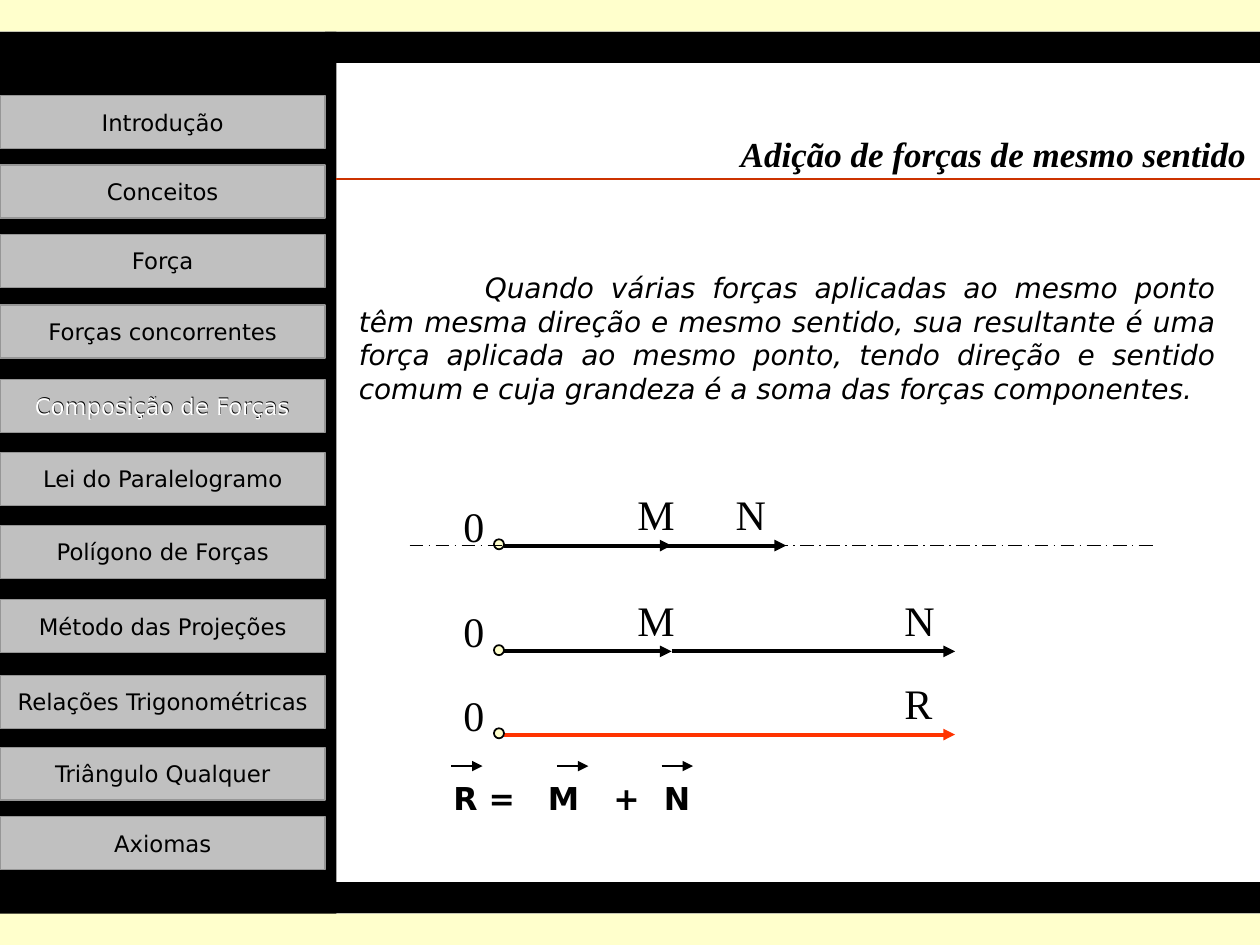
from lxml import etree
from pptx import Presentation
from pptx.dml.color import RGBColor
from pptx.enum.dml import MSO_LINE
from pptx.enum.shapes import MSO_CONNECTOR, MSO_SHAPE
from pptx.enum.text import MSO_ANCHOR, PP_ALIGN
from pptx.oxml.ns import qn
from pptx.util import Inches, Pt

RECT, OVAL = MSO_SHAPE.RECTANGLE, MSO_SHAPE.OVAL
BUTTON = MSO_SHAPE.ACTION_BUTTON_CUSTOM
STRAIGHT = MSO_CONNECTOR.STRAIGHT
DASH = MSO_LINE.LONG_DASH_DOT
TOP, MIDDLE = MSO_ANCHOR.TOP, MSO_ANCHOR.MIDDLE
LEFT, CENTER = PP_ALIGN.LEFT, PP_ALIGN.CENTER
RIGHT, JUSTIFY = PP_ALIGN.RIGHT, PP_ALIGN.JUSTIFY
SANS, SERIF = "DejaVu Sans", "Times New Roman"
COLORS = {"black": "000000", "white": "FFFFFF", "cream": "FFFFCC",
          "gray": "C0C0C0", "edge": "969696", "rule": "CC3300",
          "red": "FF3300"}

MENU = [("Introdução", 0.76), ("Conceitos", 1.31), ("Força", 1.86),
        ("Forças concorrentes", 2.42), ("Composição de Forças", 3.01),
        ("Lei do Paralelogramo", 3.59), ("Polígono de Forças", 4.17),
        ("Método das Projeções", 4.76), ("Relações Trigonométricas", 5.36),
        ("Triângulo Qualquer", 5.93), ("Axiomas", 6.48)]
ACTIVE = "Composição de Forças"
BODY = ("Quando várias forças aplicadas ao mesmo ponto têm mesma direção e "
        "mesmo sentido, sua resultante é uma força aplicada ao mesmo ponto, "
        "tendo direção e sentido comum e cuja grandeza é a soma das forças "
        "componentes.")


def color(name):
    return RGBColor.from_string(COLORS[name])


def write(shape, text, size=13, font=SANS, hue="black", bold=False,
          italic=False, align=LEFT, anchor=TOP, wrap=True, space=None,
          indent=None, tab=None):
    frame = shape.text_frame
    frame.word_wrap = wrap
    frame.vertical_anchor = anchor
    par = frame.paragraphs[0]
    par.text = text
    par.alignment = align
    if space:
        par.line_spacing = space
    props = par._p.get_or_add_pPr()
    if indent:
        props.set("indent", str(Inches(indent)))
    if tab:
        stops = etree.SubElement(props, qn("a:tabLst"))
        etree.SubElement(stops, qn("a:tab"), pos=str(Inches(tab)), algn="l")
    style = par.runs[0].font if not tab else par.font
    targets = [run.font for run in par.runs] if tab else [style]
    for style in targets:
        style.size, style.name = Pt(size), font
        style.bold, style.italic = bold, italic
        style.color.rgb = color(hue)


def label(slide, text, x, y, w, h, **form):
    box = slide.shapes.add_textbox(Inches(x), Inches(y), Inches(w), Inches(h))
    write(box, text, **form)


def block(slide, kind, x, y, w, h, fill, edge=None, width=0):
    shape = slide.shapes.add_shape(
        kind, Inches(x), Inches(y), Inches(w), Inches(h))
    shape.shadow.inherit = False
    shape.fill.solid()
    shape.fill.fore_color.rgb = color(fill)
    if edge:
        shape.line.color.rgb = color(edge)
        shape.line.width = Pt(width)
    else:
        shape.line.fill.background()
    return shape


def line(slide, x, y, end, hue="black", width=1, arrow=False, dash=None):
    link = slide.shapes.add_connector(
        STRAIGHT, Inches(x), Inches(y), Inches(end), Inches(y))
    link.line.color.rgb = color(hue)
    link.line.width = Pt(width)
    if dash:
        link.line.dash_style = dash
    if arrow:
        etree.SubElement(link.line._get_or_add_ln(), qn("a:tailEnd"),
                         type="triangle")
    etree.SubElement(link._element.spPr, qn("a:effectLst"))


def frame(slide, x, y, w, h):
    """Black side bar and bands between two cream edges."""
    edge, side = 0.25, 2.67
    block(slide, RECT, x, y + edge, side, h - edge, "black")
    for top, hue, left in [(edge, "black", 2.58), (h - 2 * edge, "black", 2.58),
                           (0, "cream", 0), (h - edge, "cream", 0)]:
        block(slide, RECT, x + left, y + top, w - left, edge, hue)


def menu(slide, x, y, w):
    """Column of buttons; the active one has a white label on top."""
    high = 0.42
    for name, top in MENU:
        key = block(slide, BUTTON, x, y + top, w, high, "gray", "edge")
        write(key, name, align=CENTER, anchor=MIDDLE, wrap=False)
        if name == ACTIVE:
            label(slide, name, x + 0.09, y + top + 0.09, w - 0.19, 0.25,
                  hue="white", align=CENTER, anchor=MIDDLE, wrap=False)


def head(slide, x, y, w):
    """Title above a thin rule."""
    line(slide, x, y + 0.42, x + w, "rule")
    bar = block(slide, RECT, x + 0.99, y, w - 1, 0.34, "white")
    write(bar, "Adição de forças de mesmo sentido", size=20, font=SERIF,
          bold=True, italic=True, align=RIGHT)


def force(slide, x, y, arrows, hue="black"):
    """Arrows from point 0; each is (start, end, name, name offset)."""
    form = {"size": 24, "font": SERIF}
    for start, end, name, left in arrows:
        line(slide, x + start, y, x + end, hue, 2.25, arrow=True)
        label(slide, name, x + left, y - 0.5, 0.5, 0.5, **form)
    label(slide, "0", x - 0.42, y - 0.41, 0.5, 0.5, **form)
    block(slide, OVAL, x - 0.08, y - 0.05, 0.08, 0.08, "cream", "black", 1)


def formula(slide, x, y):
    """Vector sum with a small arrow over each letter."""
    for text, left, wide, mark in [("R =", 0, 1.1, 0.08),
                                   ("M\t+", 0.75, 1.08, 0.92),
                                   ("N", 1.67, 0.6, 1.75)]:
        label(slide, text, x + left, y + 0.02, wide, 0.43, size=18, bold=True,
              space=1.1, tab=0.52 if "\t" in text else None)
        line(slide, x + mark, y, x + mark + 0.25, arrow=True)


def diagram(slide, x, y):
    """Both forces on one line, then end to end, then the resultant."""
    first = (0, 1.33, "M", 0.96)
    force(slide, x, y, [first, (0, 2.24, "N", 1.74)])
    line(slide, x - 0.75, y, x + 5.17, dash=DASH)
    force(slide, x, y + 0.84, [first, (1.33, 3.58, "N", 3.08)])
    force(slide, x, y + 1.5, [(0, 3.58, "R", 3.08)], "red")
    formula(slide, x - 0.5, y + 1.75)


def main():
    deck = Presentation()
    deck.slide_width, deck.slide_height = Inches(10), Inches(7.5)
    slide = deck.slides.add_slide(deck.slide_layouts[6])
    frame(slide, 0, 0, 10, 7.5)
    menu(slide, 0, 0, 2.58)
    head(slide, 2.67, 1, 7.33)
    label(slide, BODY, 2.75, 2.1, 7, 1.17, size=16, italic=True,
          align=JUSTIFY, indent=1)
    diagram(slide, 4, 4.33)
    deck.save("out.pptx")


if __name__ == "__main__":
    main()
